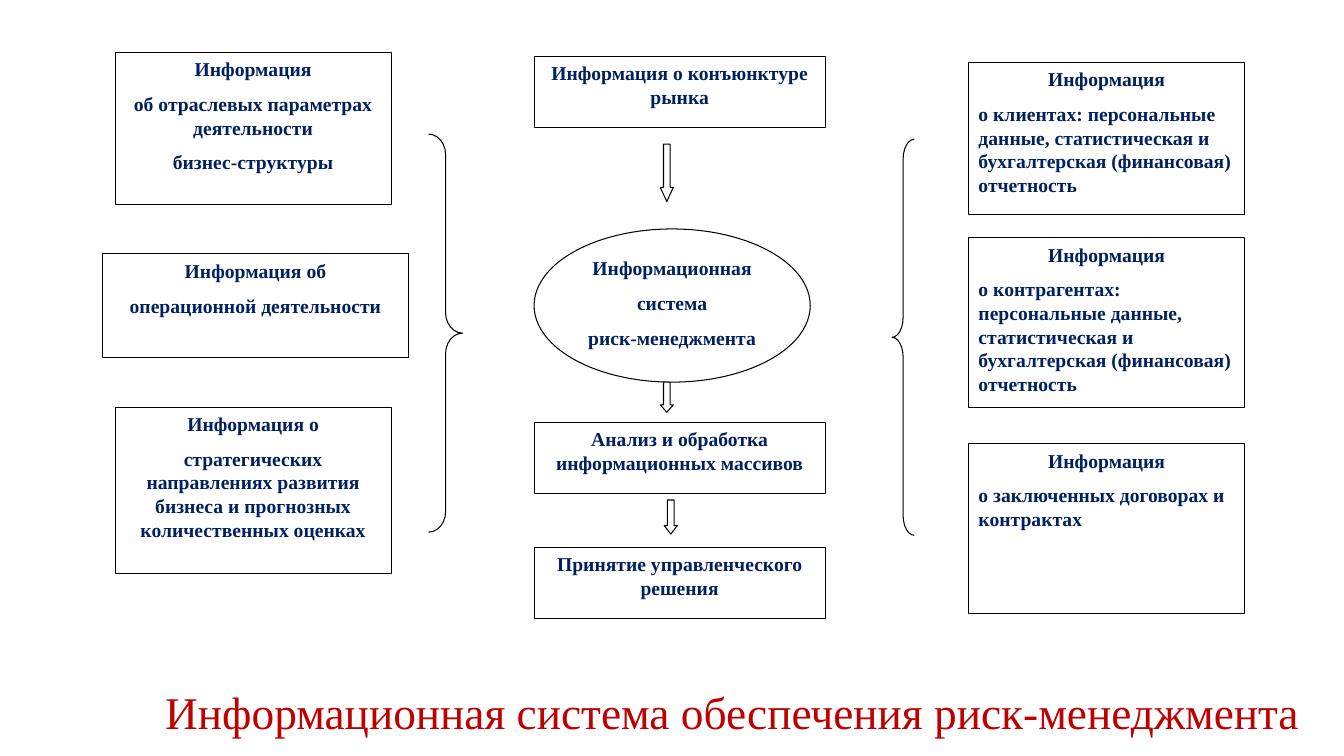
from pptx import Presentation
from pptx.dml.color import RGBColor
from pptx.enum.shapes import MSO_SHAPE as Shape
from pptx.enum.text import MSO_ANCHOR as Anchor, MSO_AUTO_SIZE as AutoSize, PP_ALIGN as Align
from pptx.util import Cm, Pt

NAVY = RGBColor(0x00, 0x20, 0x60)
RED = RGBColor(0xC0, 0x00, 0x00)
BLACK = RGBColor(0x00, 0x00, 0x00)
WHITE = RGBColor(0xFF, 0xFF, 0xFF)
FONT = "Times New Roman"

LEFT_X, CENTRE_X, RIGHT_X = 2.9, 13.46, 24.41
SIDE_W, CENTRE_W, CENTRE_H = 6.96, 7.34, 1.8

prs = Presentation()
prs.slide_width, prs.slide_height = Cm(33.87), Cm(19.05)
slide = prs.slides.add_slide(prs.slide_layouts[5])


def add_outlined(kind, left, top, width, height, filled=True):
    shape = slide.shapes.add_shape(kind, Cm(left), Cm(top), Cm(width), Cm(height))
    shape.shadow.inherit = False
    if filled:
        shape.fill.solid()
        shape.fill.fore_color.rgb = WHITE
    else:
        shape.fill.background()
    shape.line.color.rgb = BLACK
    shape.line.width = Pt(0.75)
    return shape


def add_block(kind, left, top, width, height, lines, body_align=Align.CENTER):
    frame = add_outlined(kind, left, top, width, height).text_frame
    frame.word_wrap = True
    frame.vertical_anchor = Anchor.TOP
    frame.text = "\n".join(lines)
    for index, paragraph in enumerate(frame.paragraphs):
        paragraph.alignment = body_align if index else Align.CENTER
        paragraph.space_after = Pt(8 if paragraph.alignment == Align.CENTER else 0)
        for run in paragraph.runs:
            run.font.name = FONT
            run.font.size = Pt(14)
            run.font.bold = True
            run.font.color.rgb = NAVY


title = slide.shapes.title
title.left, title.top, title.width, title.height = Cm(3.91), Cm(16.97), Cm(30.61), Cm(2.08)
title.text_frame.text = "Информационная система обеспечения риск-менеджмента"
title.text_frame.auto_size = AutoSize.NONE
title.text_frame.vertical_anchor = Anchor.MIDDLE
heading = title.text_frame.paragraphs[0]
heading.alignment = Align.LEFT
heading.line_spacing = 0.9
heading.runs[0].font.name = FONT
heading.runs[0].font.size = Pt(32.4)
heading.runs[0].font.color.rgb = RED

internal_sources = [
    (2.59, 6.4, 7.7, 2.62, ["Информация об", "операционной деятельности"]),
    (LEFT_X, 1.32, SIDE_W, 3.84,
     ["Информация", "об отраслевых параметрах деятельности", "бизнес-структуры"]),
    (LEFT_X, 10.26, SIDE_W, 4.19,
     ["Информация о",
      "стратегических направлениях развития бизнеса и прогнозных количественных оценках"]),
]
for left, top, width, height, lines in internal_sources:
    add_block(Shape.RECTANGLE, left, top, width, height, lines)

process_steps = [
    (1.42, "Информация о конъюнктуре рынка"),
    (10.64, "Анализ и обработка информационных массивов"),
    (13.79, "Принятие управленческого решения"),
]
for top, step in process_steps:
    add_block(Shape.RECTANGLE, CENTRE_X, top, CENTRE_W, CENTRE_H, [step])

add_block(Shape.OVAL, CENTRE_X, 5.77, SIDE_W, 3.86,
          ["Информационная", "система", "риск-менеджмента"])

external_sources = [
    (1.57, 3.84, "о клиентах: персональные данные, статистическая и "
                 "бухгалтерская (финансовая) отчетность"),
    (5.99, 4.27, "о контрагентах: персональные данные, статистическая и "
                 "бухгалтерская (финансовая) отчетность"),
    (11.18, 4.27, "о заключенных договорах и контрактах"),
]
for top, height, details in external_sources:
    add_block(Shape.RECTANGLE, RIGHT_X, top, SIDE_W, height,
              ["Информация", details], Align.LEFT)

braces = [
    (Shape.RIGHT_BRACE, 10.8, 3.38, 0.86, 10.03, 0.6),
    (Shape.LEFT_BRACE, 22.48, 3.51, 0.56, 9.98, 0.89),
]
for kind, left, top, width, height, curve in braces:
    brace = add_outlined(kind, left, top, width, height, filled=False)
    brace.adjustments[0] = curve

flow_arrows = [(16.64, 3.63, 1.45, 1.09), (16.64, 9.63, 0.76, 0.57), (16.74, 12.6, 0.86, 0.65)]
for left, top, height, head in flow_arrows:
    arrow = add_outlined(Shape.DOWN_ARROW, left, top, 0.33, height)
    arrow.adjustments[1] = head

prs.save("out.pptx")
